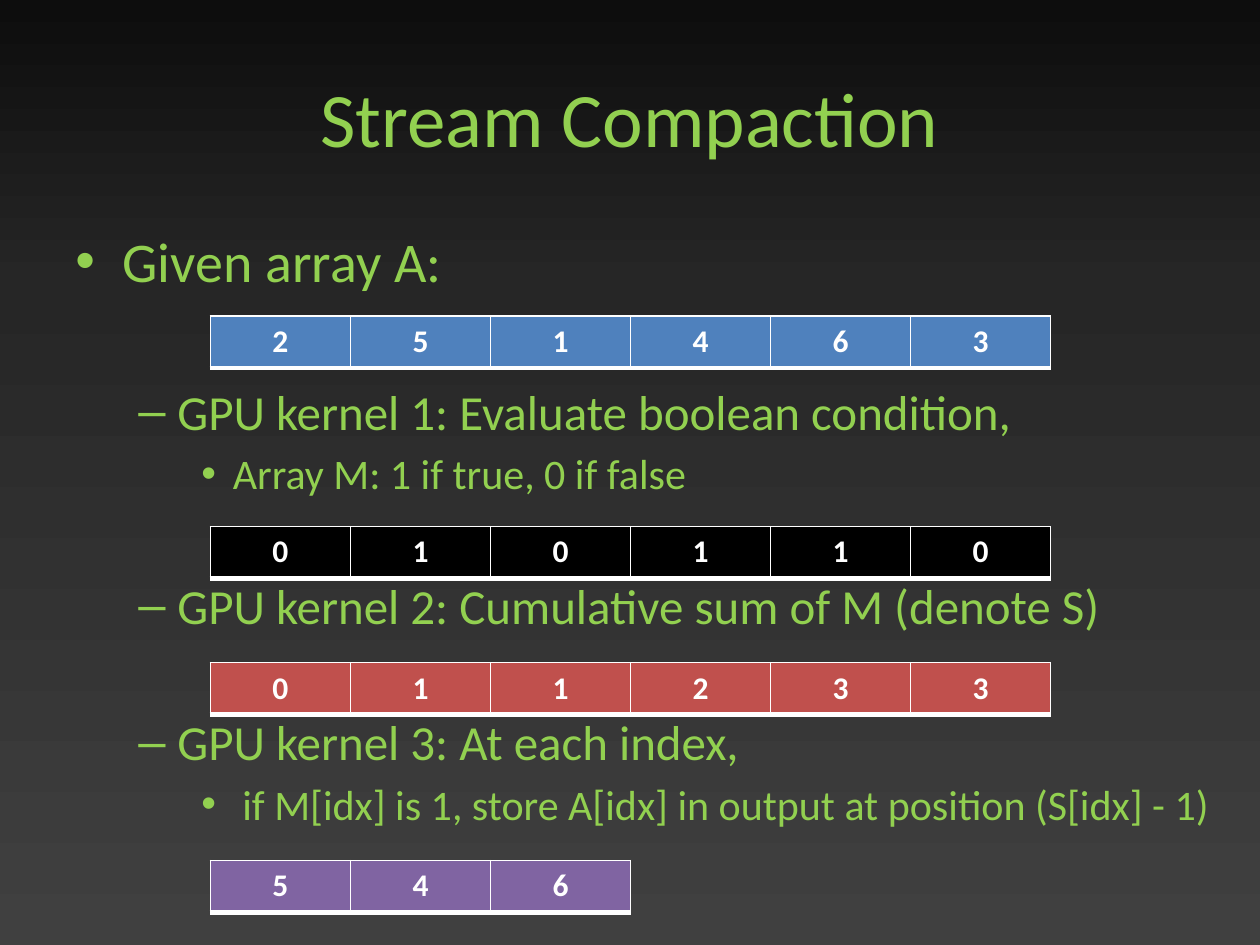
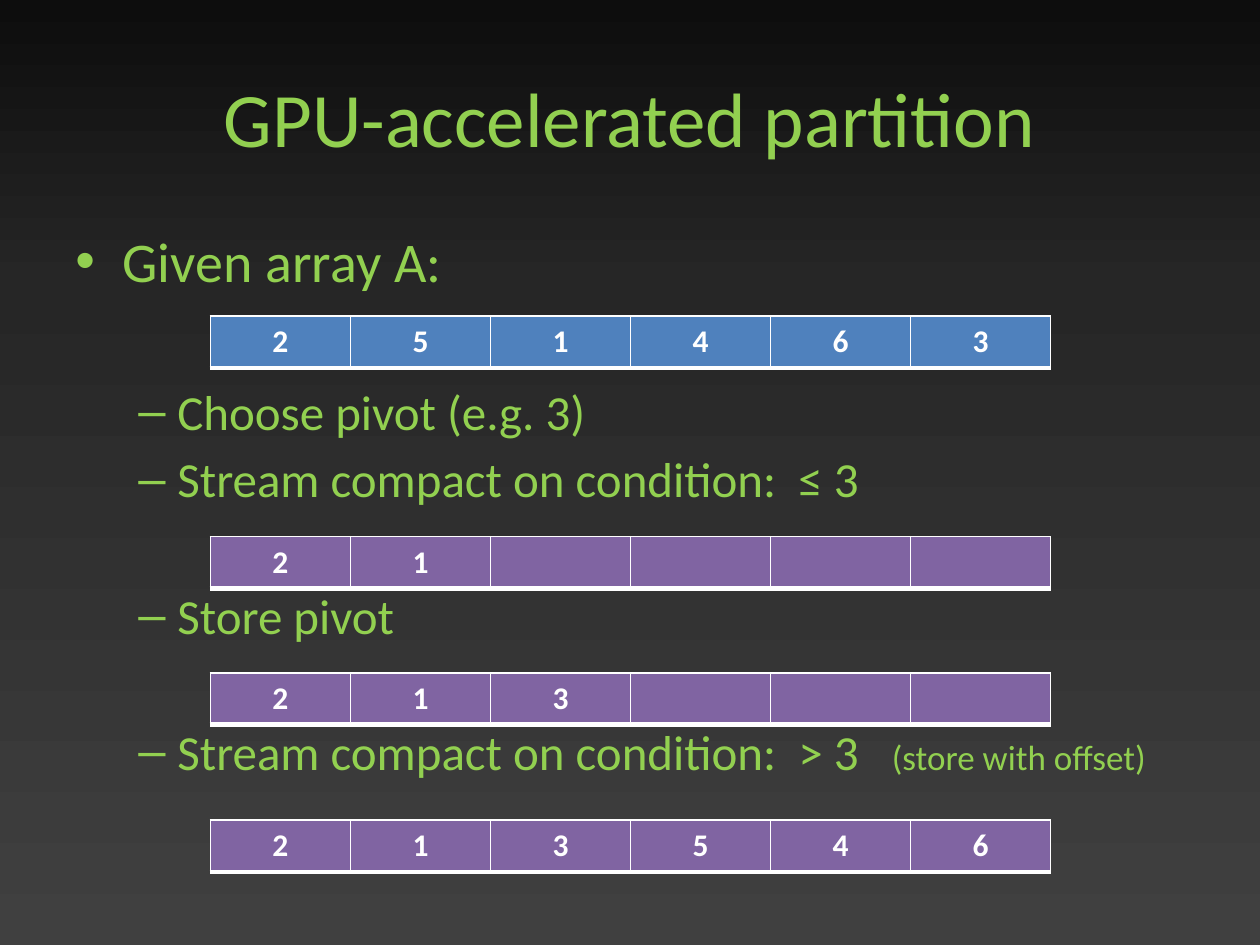
from copy import deepcopy
from dataclasses import dataclass

from lxml.etree import SubElement
from pptx import Presentation
from pptx.dml.color import RGBColor
from pptx.enum.text import MSO_ANCHOR, PP_ALIGN
from pptx.oxml.ns import qn
from pptx.util import Inches, Pt

# Shared look
FONT = "Calibri"
GREEN, WHITE, BLACK = "92D050", "FFFFFF", "000000"
BLUE, RED, PURPLE = "4F81BD", "C0504D", "8064A2"
STOPS = [(0, "404040"), (0.7, "262626"), (1, "0D0D0D")]
EDGES = {"lnL": 1, "lnR": 1, "lnT": 1, "lnB": 3}
CELL_W, ROW_H = 6.67 / 6, 0.41
ROW_X = 1.67


@dataclass
class Level:
    mark: str
    left: float
    hang: float
    size: int


LEVELS = [
    Level("•", 0.375, 0.375, 32),
    Level("–", 0.81, 0.31, 28),
    Level("•", 1.25, 0.25, 24),
]


@dataclass
class Point:
    text: str
    level: int = 1
    before: float = 5  # points above the line
    note: str = ""


@dataclass
class Row:
    top: float
    fill: str
    items: list[str]


@dataclass
class Page:
    title: str
    width: float
    points: list[Point]
    rows: list[Row]


# Room left above a point for the array drawn before it
GAP_TOP, GAP = 50, 44.2
GIVEN = Point("Given array A:", 0, 0)
INPUT = Row(2.51, BLUE, list("251463"))

PAGES = [
    Page("Stream Compaction", 9.67, [
        GIVEN,
        Point("GPU kernel 1: Evaluate boolean condition,", before=GAP_TOP),
        Point("Array M: 1 if true, 0 if false", 2, 4.3),
        Point("GPU kernel 2: Cumulative sum of M (denote S)", before=GAP),
        Point("GPU kernel 3: At each index,", before=GAP),
        Point(" if M[idx] is 1, store A[idx] in output at position (S[idx] - 1)", 2, 4.3),
    ], [
        INPUT,
        Row(4.18, BLACK, list("010110")),
        Row(5.26, RED, list("011233")),
        Row(6.83, PURPLE, list("546")),
    ]),
    Page("GPU-accelerated partition", 9, [
        GIVEN,
        Point("Choose pivot (e.g. 3)", before=GAP_TOP),
        Point("Stream compact on condition:  ≤ 3"),
        Point("Store pivot", before=GAP),
        Point("Stream compact on condition:  > 3   ", before=GAP, note="(store with offset)"),
    ], [
        INPUT,
        Row(4.26, PURPLE, ["2", "1", "", "", "", ""]),
        Row(5.34, PURPLE, ["2", "1", "3", "", "", ""]),
        Row(6.51, PURPLE, list("213546")),
    ]),
]


def paint(fill, color: str) -> None:
    fill.solid()
    fill.fore_color.rgb = RGBColor.from_string(color)


def write(par, text: str, *, size: float, color: str = GREEN,
          bold: bool = False, align=PP_ALIGN.LEFT) -> None:
    par.alignment = align
    run = par.add_run()
    run.text = text
    run.font.name, run.font.size, run.font.bold = FONT, Pt(size), bold
    run.font.color.rgb = RGBColor.from_string(color)


def set_back(master) -> None:
    """Give every slide the dark gradient, lightest at the bottom."""
    fill = master.background.fill
    fill.gradient()
    fill.gradient_angle = 90
    stops = master.element.find(".//" + qn("a:gsLst"))
    stops.append(deepcopy(stops[0]))
    for stop, (place, color) in zip(fill.gradient_stops, STOPS):
        stop.position = place
        stop.color.rgb = RGBColor.from_string(color)


def add_title(slide, text: str) -> None:
    title = slide.shapes.title
    title.left, title.top = Inches(0.5), Inches(0.3)
    title.width, title.height = Inches(9), Inches(1.25)
    title.text_frame.vertical_anchor = MSO_ANCHOR.MIDDLE
    write(title.text_frame.paragraphs[0], text, size=44, align=PP_ALIGN.CENTER)


def add_points(slide, points: list[Point], width: float) -> None:
    box = slide.shapes.add_textbox(Inches(0.5), Inches(1.75), Inches(width), Inches(5.75))
    frame = box.text_frame
    frame.word_wrap = True
    for num, point in enumerate(points):
        par = frame.add_paragraph() if num else frame.paragraphs[0]
        level = LEVELS[point.level]
        par.level = point.level
        par.space_before = Pt(point.before)
        write(par, point.text, size=level.size)
        if point.note:
            write(par, point.note, size=20)
        # Bullet and hanging indent
        props = par._p.get_or_add_pPr()
        props.set("marL", str(Inches(level.left)))
        props.set("indent", str(-Inches(level.hang)))
        SubElement(props, qn("a:buFont"), typeface="Arial")
        SubElement(props, qn("a:buChar"), char=level.mark)


def add_edges(cell) -> None:
    props = cell._tc.get_or_add_tcPr()
    for side, width in EDGES.items():
        line = SubElement(props, qn(f"a:{side}"), w=str(Pt(width)))
        solid = SubElement(line, qn("a:solidFill"))
        SubElement(solid, qn("a:srgbClr"), val=WHITE)


def add_row(slide, row: Row) -> None:
    count = len(row.items)
    table = slide.shapes.add_table(1, count, Inches(ROW_X), Inches(row.top),
                                   Inches(CELL_W * count), Inches(ROW_H)).table
    table.first_row = table.horz_banding = False
    for cell, item in zip(table.iter_cells(), row.items):
        add_edges(cell)
        paint(cell.fill, row.fill)
        if item:
            write(cell.text_frame.paragraphs[0], item, size=18, color=WHITE,
                  bold=True, align=PP_ALIGN.CENTER)


def main() -> None:
    deck = Presentation()
    deck.slide_width, deck.slide_height = Inches(10), Inches(7.5)
    set_back(deck.slide_master)
    for page in PAGES:
        slide = deck.slides.add_slide(deck.slide_layouts[5])
        add_title(slide, page.title)
        add_points(slide, page.points, page.width)
        for row in page.rows:
            add_row(slide, row)
    deck.save("out.pptx")


if __name__ == "__main__":
    main()
